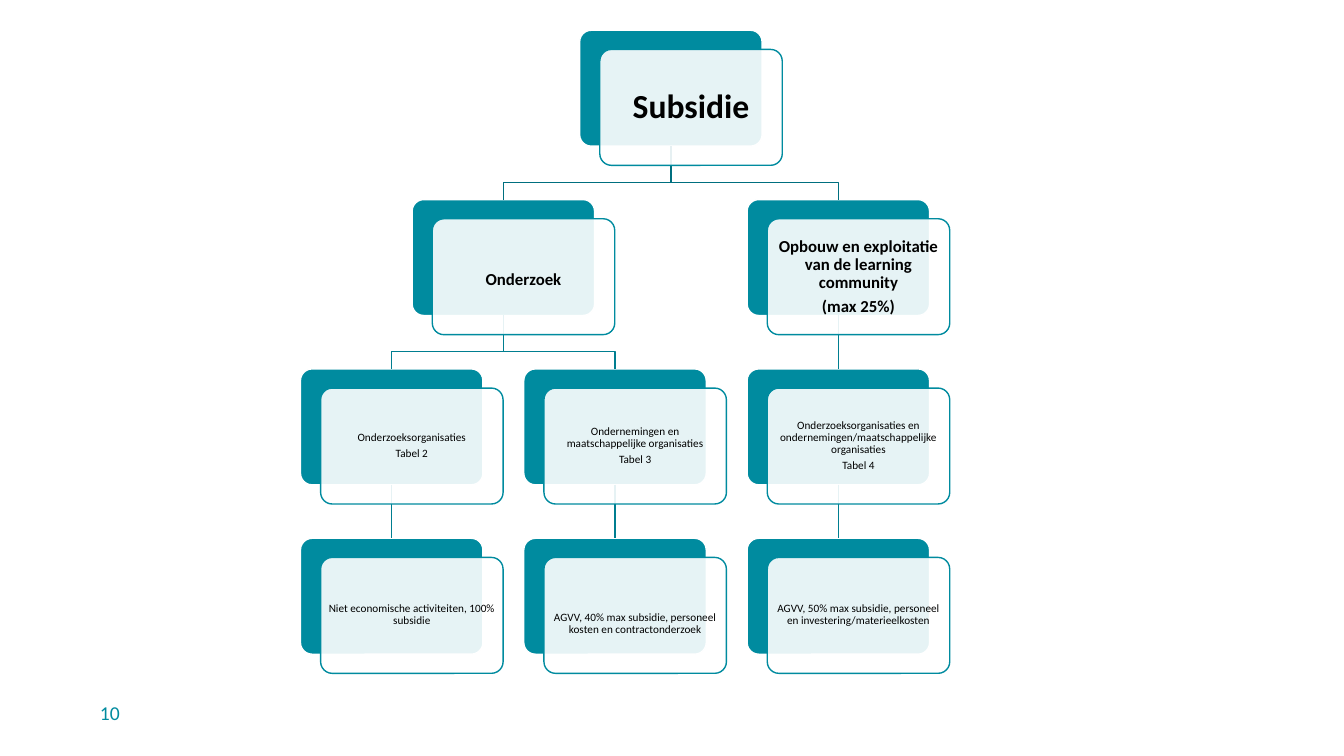
from dataclasses import dataclass
from typing import Optional

import pptx
import pptx.dml.color
import pptx.enum.shapes
import pptx.enum.text
import pptx.oxml
import pptx.oxml.ns
import pptx.util

Inches = pptx.util.Inches
Pt = pptx.util.Pt
RGBColor = pptx.dml.color.RGBColor

TEAL = RGBColor(0x00, 0x8B, 0x9F)
TOP_LINK = RGBColor(0x00, 0x6F, 0x7F)
LOWER_LINK = RGBColor(0x00, 0x7E, 0x90)
WHITE = RGBColor(0xFF, 0xFF, 0xFF)
BLACK = RGBColor(0x00, 0x00, 0x00)
FONT = "Calibri"

LEFT, TOP = 2.98, 0.3
COLUMN_STEP, ROW_STEP = 2.215, 1.68
CARD_WIDTH, CARD_HEIGHT = 1.81, 1.15
FRONT_DX, FRONT_DY = 0.2, 0.19
BEND_DROP = 0.36


@dataclass(frozen=True)
class Card:
    column: float
    row: int
    lines: tuple[str, ...]
    parent: Optional["Card"] = None
    size: int = 8
    inset: float = 0.03
    text_drop: float = 0.0

    @property
    def left(self) -> float:
        return LEFT + self.column * COLUMN_STEP

    @property
    def top(self) -> float:
        return TOP + self.row * ROW_STEP

    @property
    def center(self) -> float:
        return self.left + CARD_WIDTH / 2

    @property
    def bottom(self) -> float:
        return self.top + CARD_HEIGHT


SUBSIDIE = Card(1.25, 0, ("Subsidie",), size=24, inset=0.1)
ONDERZOEK = Card(0.5, 1, ("Onderzoek",), SUBSIDIE, 12, 0.05, 0.03)
OPBOUW = Card(2, 1, ("Opbouw en exploitatie van de learning community", "(max 25%)"),
              SUBSIDIE, 12, 0.05)
ORGANISATIES = Card(0, 2, ("Onderzoeksorganisaties", "Tabel 2"), ONDERZOEK)
ONDERNEMINGEN = Card(1, 2, ("Ondernemingen en maatschappelijke organisaties", "Tabel 3"),
                     ONDERZOEK)
GEZAMENLIJK = Card(
    2, 2,
    ("Onderzoeksorganisaties en ondernemingen/maatschappelijke organisaties", "Tabel 4"),
    OPBOUW)
CARDS = (
    SUBSIDIE, ONDERZOEK, OPBOUW, ORGANISATIES, ONDERNEMINGEN, GEZAMENLIJK,
    Card(0, 3, ("Niet economische activiteiten, 100% subsidie",), ORGANISATIES),
    Card(1, 3, ("AGVV, 40% max subsidie, personeel kosten en contractonderzoek",),
         ONDERNEMINGEN, text_drop=0.08),
    Card(2, 3, ("AGVV, 50% max subsidie, personeel en investering/materieelkosten",),
         GEZAMENLIJK),
)


def add_panel(shapes, left: float, top: float, fill: RGBColor, line: RGBColor):
    panel = shapes.add_shape(
        pptx.enum.shapes.MSO_SHAPE.ROUNDED_RECTANGLE,
        Inches(left), Inches(top), Inches(CARD_WIDTH), Inches(CARD_HEIGHT))
    panel.adjustments[0] = 0.1
    panel.shadow.inherit = False
    panel.fill.solid()
    panel.fill.fore_color.rgb = fill
    panel.line.color.rgb = line
    panel.line.width = Pt(1)
    return panel


def add_link(shapes, card: Card, backs: dict) -> None:
    """Join a card to its parent, straight down or with two bends."""
    parent = card.parent
    if parent.column == card.column:
        link = shapes.add_connector(
            pptx.enum.shapes.MSO_CONNECTOR.STRAIGHT,
            Inches(parent.center), Inches(parent.bottom),
            Inches(card.center), Inches(card.top))
        link.begin_connect(backs[parent], 2)
        link.end_connect(backs[card], 0)
        pptx.oxml.ns.qn("a:effectLst")
        link._element.spPr.append(
            pptx.oxml.parse_xml(f'<a:effectLst {pptx.oxml.ns.nsdecls("a")}/>'))
    else:
        bend = Inches(parent.bottom + BEND_DROP)
        path = shapes.build_freeform(Inches(parent.center), Inches(parent.bottom))
        path.add_line_segments(
            [(Inches(parent.center), bend), (Inches(card.center), bend),
             (Inches(card.center), Inches(card.top))], close=False)
        link = path.convert_to_shape()
        link.fill.background()
        link.shadow.inherit = False
    link.line.color.rgb = TOP_LINK if parent.row == 0 else LOWER_LINK
    link.line.width = Pt(1)


def add_front(shapes, card: Card) -> None:
    """Add the translucent front panel with the card's text."""
    front = add_panel(shapes, card.left + FRONT_DX, card.top + FRONT_DY, WHITE, TEAL)
    color = front._element.spPr.find(".//" + pptx.oxml.ns.qn("a:srgbClr"))
    color.append(pptx.oxml.parse_xml(
        f'<a:alpha {pptx.oxml.ns.nsdecls("a")} val="90000"/>'))
    frame = front.text_frame
    frame.word_wrap = True
    frame.vertical_anchor = pptx.enum.text.MSO_ANCHOR.MIDDLE
    frame.margin_left = frame.margin_right = frame.margin_bottom = Inches(card.inset)
    frame.margin_top = Inches(card.inset + 2 * card.text_drop)
    for index, line in enumerate(card.lines):
        paragraph = frame.paragraphs[0] if index == 0 else frame.add_paragraph()
        paragraph.text = line
        paragraph.alignment = pptx.enum.text.PP_ALIGN.CENTER
        paragraph.line_spacing = 0.9
        paragraph.space_after = Pt(0.35 * card.size)
        paragraph.font.name = FONT
        paragraph.font.size = Pt(card.size)
        paragraph.font.bold = card.row < 2
        paragraph.font.color.rgb = BLACK


def add_page_number(shapes, number: str) -> None:
    frame = shapes.add_textbox(
        Inches(0.99), Inches(6.95), Inches(0.31), Inches(0.25)).text_frame
    frame.word_wrap = True
    frame.vertical_anchor = pptx.enum.text.MSO_ANCHOR.MIDDLE
    frame.margin_left = frame.margin_right = 0
    frame.margin_top = frame.margin_bottom = 0
    paragraph = frame.paragraphs[0]
    paragraph.text = number
    paragraph.font.name = FONT
    paragraph.font.size = Pt(14)
    paragraph.font.color.rgb = TEAL


def main() -> None:
    presentation = pptx.Presentation()
    presentation.slide_width = Inches(13.33)
    presentation.slide_height = Inches(7.5)
    shapes = presentation.slides.add_slide(presentation.slide_layouts[6]).shapes
    add_page_number(shapes, "10")
    backs = {card: add_panel(shapes, card.left, card.top, TEAL, WHITE) for card in CARDS}
    for card in CARDS:
        if card.parent:
            add_link(shapes, card, backs)
    for card in CARDS:
        add_front(shapes, card)
    presentation.save("out.pptx")


if __name__ == "__main__":
    main()
